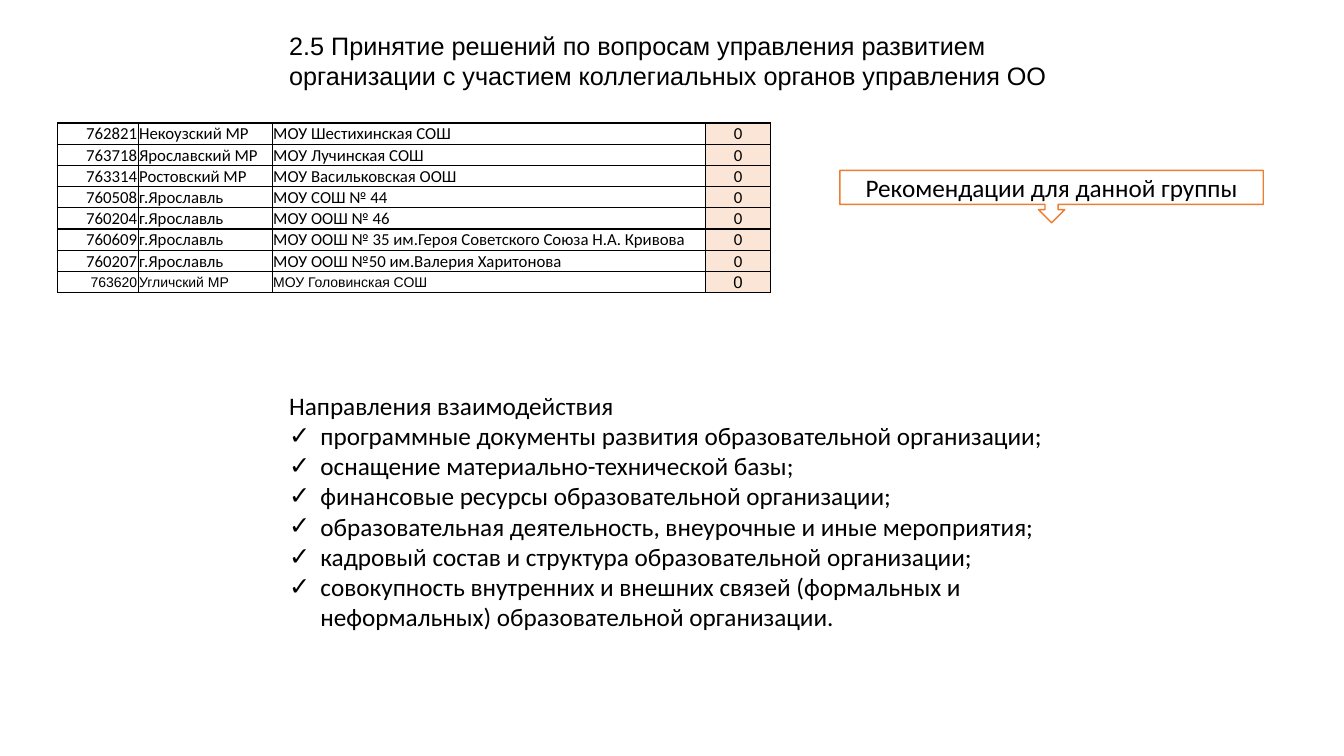
from lxml.etree import SubElement
from pptx import Presentation
from pptx.dml.color import RGBColor
from pptx.enum.shapes import MSO_SHAPE as Shape
from pptx.enum.text import MSO_ANCHOR as Anchor, PP_ALIGN as Align
from pptx.oxml import parse_xml
from pptx.oxml.ns import nsdecls, qn
from pptx.util import Inches, Pt

# Content
TITLE = ("2.5 Принятие решений по вопросам управления развитием "
         "организации с участием коллегиальных органов управления ОО")
ADVICE = "Рекомендации для данной группы"
SCHOOLS = [
    ("762821", "Некоузский МР", "МОУ Шестихинская СОШ", "0"),
    ("763718", "Ярославский МР", "МОУ Лучинская СОШ", "0"),
    ("763314", "Ростовский МР", "МОУ Васильковская ООШ", "0"),
    ("760508", "г.Ярославль", "МОУ СОШ № 44", "0"),
    ("760204", "г.Ярославль", "МОУ ООШ № 46", "0"),
    ("760609", "г.Ярославль",
     "МОУ ООШ № 35 им.Героя Советского Союза Н.А. Кривова", "0"),
    ("760207", "г.Ярославль", "МОУ ООШ №50 им.Валерия Харитонова", "0"),
    ("763620", "Угличский МР", "МОУ Головинская СОШ", "0"),
]
HEAD = "Направления взаимодействия"
AREAS = [
    "программные документы развития образовательной организации;",
    "оснащение материально-технической базы;",
    "финансовые ресурсы образовательной организации;",
    "образовательная деятельность, внеурочные и иные мероприятия;",
    "кадровый состав и структура образовательной организации;",
    "совокупность внутренних и внешних связей (формальных и "
    "неформальных) образовательной организации.",
]
WIDTHS = [0.8, 1.33, 4.3, 0.64]
ALIGNS = [Align.RIGHT, Align.LEFT, Align.LEFT, Align.CENTER]
BLACK, WHITE, ORANGE, PEACH = "000000", "FFFFFF", "ED7D31", "FBE5D6"


def color(code):
    return RGBColor.from_string(code)


def write(para, text, size=18, face="Calibri", align=Align.LEFT):
    para.alignment = align
    run = para.add_run()
    run.text = text
    run.font.size = Pt(size)
    run.font.name = face
    run.font.color.rgb = color(BLACK)


def add_box(slide, x, y, w, h):
    box = slide.shapes.add_textbox(*map(Inches, (x, y, w, h)))
    box.text_frame.word_wrap = True
    return box.text_frame


def add_check(para):
    props = para._p.get_or_add_pPr()
    props.set("marL", str(Inches(0.31)))
    props.set("indent", str(-Inches(0.31)))
    SubElement(props, qn("a:buFont")).set("typeface", "Arial")
    SubElement(props, qn("a:buChar")).set("char", "✓")


def add_edges(cell):
    props = cell._tc.get_or_add_tcPr()
    for i, side in enumerate(("lnL", "lnR", "lnT", "lnB")):
        props.insert(i, parse_xml(
            f'<a:{side} {nsdecls("a")} w="{Pt(1)}"><a:solidFill>'
            f'<a:srgbClr val="{BLACK}"/></a:solidFill></a:{side}>'))


def add_grid(slide):
    rows, cols = len(SCHOOLS), len(WIDTHS)
    high = 1.66 / rows
    frame = slide.shapes.add_table(
        rows, cols, Inches(0.57), Inches(1.22),
        Inches(sum(WIDTHS)), Inches(high * rows))
    grid = frame.table
    grid.first_row = grid.horz_banding = False
    for col, width in zip(grid.columns, WIDTHS):
        col.width = Inches(width)
    for r, school in enumerate(SCHOOLS):
        grid.rows[r].height = Inches(high)
        last_row = r == rows - 1
        for c, text in enumerate(school):
            cell = grid.cell(r, c)
            score = c == cols - 1
            cell.margin_left = cell.margin_right = Inches(0.01)
            cell.margin_top, cell.margin_bottom = Inches(0.01), 0
            cell.vertical_anchor = Anchor.BOTTOM if score else Anchor.MIDDLE
            if score:
                cell.fill.solid()
                cell.fill.fore_color.rgb = color(PEACH)
            else:
                cell.fill.background()
            add_edges(cell)
            write(cell.text_frame.paragraphs[0], text,
                  10 if last_row and not score else 12,
                  "Arial" if last_row else "Calibri", ALIGNS[c])


def main():
    deck = Presentation()
    deck.slide_width, deck.slide_height = Inches(13.33), Inches(7.5)
    slide = deck.slides.add_slide(deck.slide_layouts[6])

    # Callout
    call = slide.shapes.add_shape(
        Shape.DOWN_ARROW_CALLOUT, *map(Inches, (8.33, 1.69, 4.2, 0.52)))
    call.shadow.inherit = False
    call.fill.solid()
    call.fill.fore_color.rgb = color(WHITE)
    call.line.color.rgb = color(ORANGE)
    call.line.width = Pt(1)
    call.text_frame.word_wrap = True
    call.text_frame.vertical_anchor = Anchor.MIDDLE
    write(call.text_frame.paragraphs[0], ADVICE, align=Align.CENTER)

    # Title and table
    title = add_box(slide, 2.77, 0.25, 8, 0.71)
    write(title.paragraphs[0], TITLE, face="Arial")
    add_grid(slide)

    # Checklist
    body = add_box(slide, 2.77, 3.82, 8.1, 2.52)
    write(body.paragraphs[0], HEAD)
    for area in AREAS:
        para = body.add_paragraph()
        add_check(para)
        write(para, area)

    deck.save("out.pptx")


if __name__ == "__main__":
    main()
